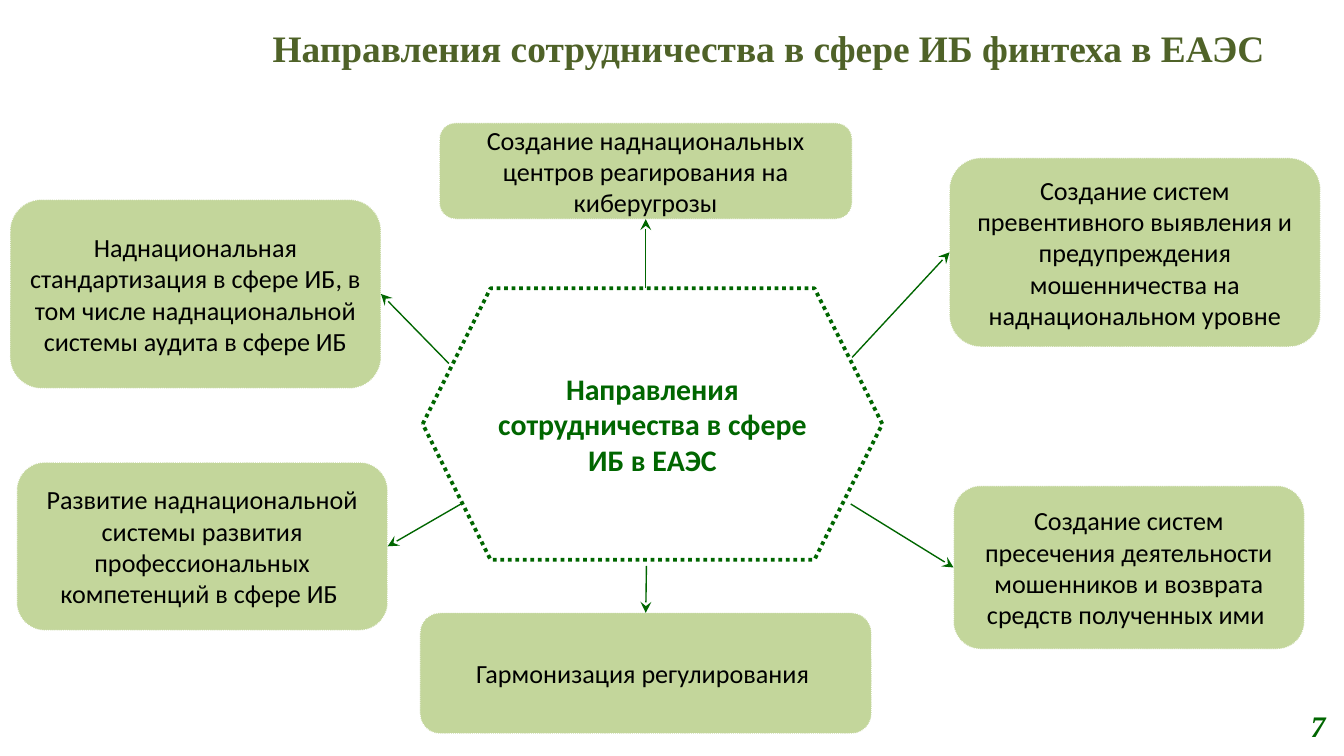
from lxml.etree import SubElement
from pptx import Presentation
from pptx.dml.color import RGBColor
from pptx.enum.dml import MSO_LINE
from pptx.enum.shapes import MSO_CONNECTOR, MSO_SHAPE
from pptx.enum.text import MSO_ANCHOR, PP_ALIGN
from pptx.oxml.ns import qn
from pptx.util import Pt

PX = 4572  # 200 px to the inch
GREEN = RGBColor(0x00, 0x66, 0x00)
OLIVE = RGBColor(0x4F, 0x62, 0x28)
LIME = RGBColor(0xC3, 0xD6, 0x9B)
WHITE = RGBColor(0xFF, 0xFF, 0xFF)
BLACK = RGBColor(0x00, 0x00, 0x00)
TOP, LEFT, BOTTOM, RIGHT = range(4)

deck = Presentation()
deck.slide_width, deck.slide_height = 2000 * PX, 1125 * PX
slide = deck.slides.add_slide(deck.slide_layouts[6])
shapes = slide.shapes


def write(shape, text, size, color, face="Calibri", bold=False,
          align=PP_ALIGN.CENTER, anchor=MSO_ANCHOR.MIDDLE):
    frame = shape.text_frame
    frame.word_wrap = True
    frame.vertical_anchor = anchor
    para = frame.paragraphs[0]
    para.text = text
    para.alignment = align
    font = para.font
    font.name, font.size, font.bold = face, Pt(size), bold
    font.color.rgb = color
    return para


def draw(kind, place, fill, line, width):
    shape = shapes.add_shape(kind, *[n * PX for n in place])
    shape.shadow.inherit = False
    shape.fill.solid()
    shape.fill.fore_color.rgb = fill
    shape.line.color.rgb = line
    shape.line.width = Pt(width)
    shape.line.dash_style = MSO_LINE.ROUND_DOT
    return shape


# Title and page number
title = shapes.add_textbox(386 * PX, 28 * PX, 1528 * PX, 106 * PX)
write(title, "Направления сотрудничества в сфере ИБ финтеха в ЕАЭС", 20, OLIVE,
      "Times New Roman", True, PP_ALIGN.LEFT, MSO_ANCHOR.TOP)
page = shapes.add_textbox(1914 * PX, 1050 * PX, 78 * PX, 58 * PX)
para = write(page, "7", 16, GREEN, "Times New Roman", True, PP_ALIGN.RIGHT)
para.font.italic = True

# Central hexagon
hub = draw(MSO_SHAPE.HEXAGON, (629, 429, 684, 404), WHITE, GREEN, 2)
write(hub, "Направления сотрудничества в сфере ИБ в ЕАЭС", 16, GREEN, bold=True)

# Directions: box, arrow start, side where the arrow ends, text
items = [
    ((654, 183, 614, 143), (961, 429), BOTTOM,
     "Создание наднациональных центров реагирования на киберугрозы"),
    ((1413, 235, 552, 281), (1268, 532), LEFT,
     "Создание систем превентивного выявления и предупреждения "
     "мошенничества на наднациональном уровне"),
    ((1419, 723, 522, 243), (1266, 750), LEFT,
     "Создание систем пресечения деятельности мошенников и возврата "
     "средств полученных ими "),
    ((625, 912, 672, 180), (962, 842), TOP,
     "Гармонизация регулирования "),
    ((25, 688, 552, 250), (686, 750), RIGHT,
     "Развитие наднациональной системы развития профессиональных "
     "компетенций в сфере ИБ "),
    ((15, 297, 552, 281), (668, 541), RIGHT,
     "Наднациональная стандартизация в сфере ИБ, в том числе "
     "наднациональной системы аудита в сфере ИБ"),
]
for place, start, side, text in items:
    box = draw(MSO_SHAPE.ROUNDED_RECTANGLE, place, LIME, WHITE, 0.5)
    frame = box.text_frame
    frame.margin_left = frame.margin_right = 8 * PX
    frame.margin_top = frame.margin_bottom = 10 * PX
    write(box, text, 14, BLACK)

    # Arrow from the hexagon to the box
    x, y = [n * PX for n in start]
    arrow = shapes.add_connector(MSO_CONNECTOR.STRAIGHT, x, y, x, y)
    arrow.end_connect(box, side)
    arrow.line.color.rgb = GREEN
    arrow.line.width = Pt(0.75)
    SubElement(arrow.line._get_or_add_ln(), qn("a:tailEnd"), type="stealth")
    SubElement(arrow._element.spPr, qn("a:effectLst"))

deck.save("out.pptx")
